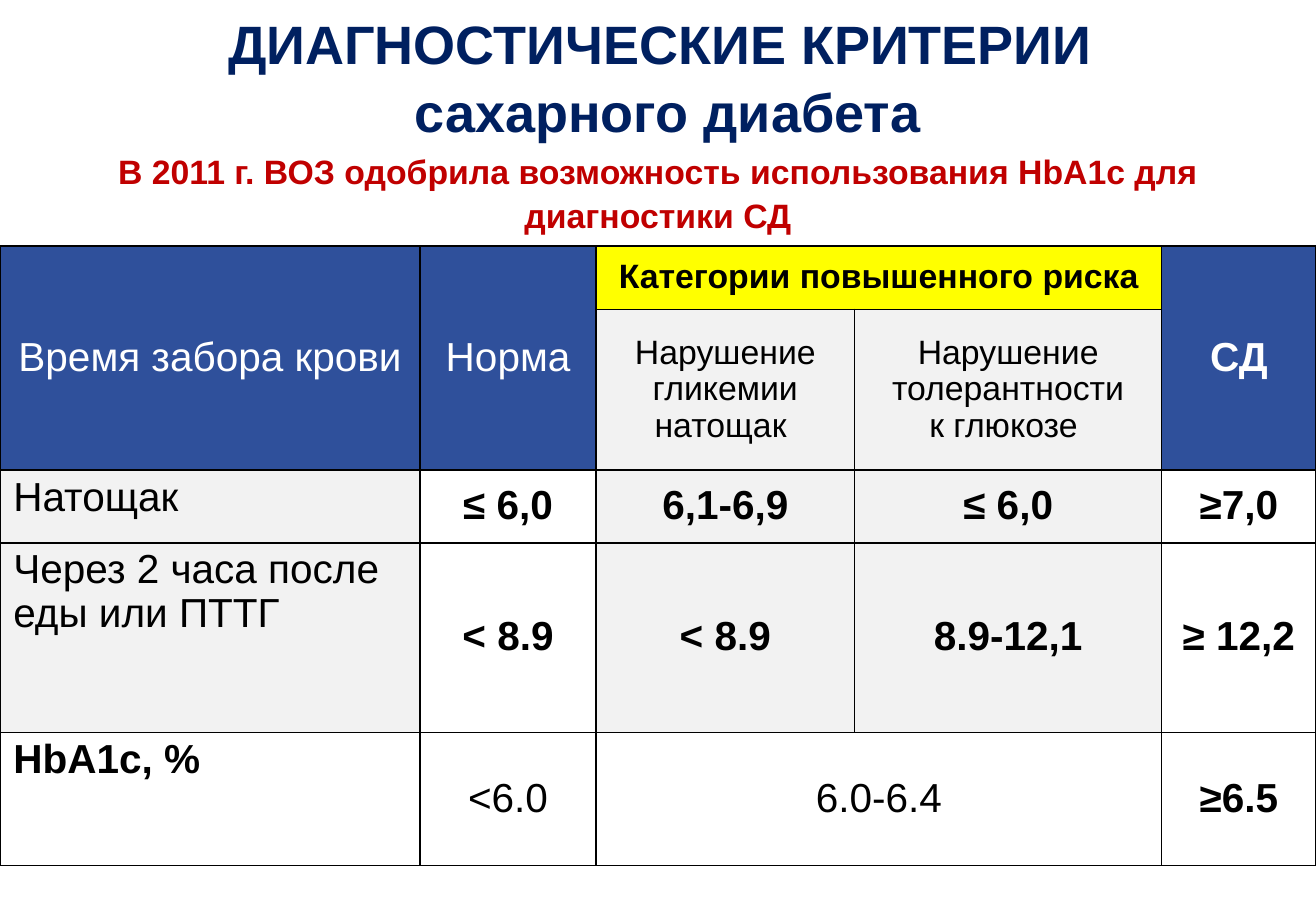
from pptx import Presentation, util as u
from pptx.dml.color import RGBColor
from pptx.enum import text as t
from pptx.oxml import parse_xml
from pptx.oxml.ns import nsdecls
from dataclasses import dataclass


@dataclass(frozen=True)
class Theme:
    font: str = "Arial"
    navy: str = "002060"
    red: str = "C00000"
    blue: str = "2F509B"
    yellow: str = "FFFF00"
    grey: str = "F2F2F2"
    white: str = "FFFFFF"
    black: str = "000000"
    title: int = 32
    cell: int = 24
    small: int = 20


T = Theme()
WIDE, HIGH = 10.83, 7.5
COLS = 3.46, 1.45, 2.13, 2.53, 1.27
ROWS = 0.52, 1.32, 0.6, 1.56, 1.09

LEFT = dict(align=t.PP_ALIGN.LEFT, anchor=t.MSO_ANCHOR.TOP)
HEAD = dict(fill=T.blue, color=T.white)
SUB = dict(fill=T.grey, size=T.small)
GREY = dict(fill=T.grey, bold=True)
BOLD = dict(bold=True)

# (row, column): text, format, rows and columns spanned
CELLS = {
    (0, 0): ("Время забора крови", HEAD, 2, 1),
    (0, 1): ("Норма", HEAD, 2, 1),
    (0, 2): ("Категории повышенного риска",
             dict(fill=T.yellow, size=T.small, bold=True), 1, 2),
    (0, 4): ("СД", HEAD | BOLD, 2, 1),
    (1, 2): ("Нарушение\nгликемии\nнатощак ", SUB, 1, 1),
    (1, 3): ("Нарушение\nтолерантности\nк глюкозе ", SUB, 1, 1),
    (2, 0): ("Натощак", LEFT | dict(fill=T.grey), 1, 1),
    (2, 1): ("≤ 6,0", BOLD, 1, 1),
    (2, 2): ("6,1-6,9", GREY, 1, 1),
    (2, 3): ("≤ 6,0", GREY, 1, 1),
    (2, 4): ("≥7,0", BOLD, 1, 1),
    (3, 0): ("Через 2 часа после еды или ПТТГ", LEFT | dict(fill=T.grey), 1, 1),
    (3, 1): ("< 8.9", BOLD, 1, 1),
    (3, 2): ("< 8.9", GREY, 1, 1),
    (3, 3): ("8.9-12,1", GREY, 1, 1),
    (3, 4): ("≥ 12,2", BOLD, 1, 1),
    (4, 0): ("HbA1c, %", LEFT | BOLD, 1, 1),
    (4, 1): ("<6.0", {}, 1, 1),
    (4, 2): ("6.0-6.4", {}, 1, 2),
    (4, 4): ("≥6.5", BOLD, 1, 1),
}


def share(x, y, w, h):
    """Turn shares of the slide's size into lengths."""
    return [u.Inches(v * s) for v, s in zip((x, y, w, h), (WIDE, HIGH) * 2)]


def write(frame, words, size=T.cell, color=T.black, bold=False,
          align=t.PP_ALIGN.CENTER, lead=0.97):
    frame.text = words
    for para in frame.paragraphs:
        para.alignment, para.line_spacing = align, lead
        for run in para.runs:
            for key, val in dict(name=T.font, size=u.Pt(size), bold=bold).items():
                setattr(run.font, key, val)
            run.font.color.rgb = RGBColor.from_string(color)


def label(slide, box, words, **look):
    frame = slide.shapes.add_textbox(*box).text_frame
    frame.word_wrap = True
    frame.vertical_anchor = t.MSO_ANCHOR.MIDDLE
    write(frame, words, **look)


def edge(cell):
    """Draw a thin black line on each side of the cell."""
    props = cell._tc.get_or_add_tcPr()
    for spot, side in enumerate("LRTB"):
        props.insert(spot, parse_xml(
            f'<a:ln{side} {nsdecls("a")} w="12700"><a:solidFill>'
            f'<a:srgbClr val="{T.black}"/></a:solidFill></a:ln{side}>'))


def paint(cell, fill=None):
    if fill:
        cell.fill.solid()
        cell.fill.fore_color.rgb = RGBColor.from_string(fill)
    else:
        cell.fill.background()
    edge(cell)


def criteria(slide, box):
    grid = slide.shapes.add_table(len(ROWS), len(COLS), *box).table
    grid.first_row = grid.horz_banding = False
    for col, part in zip(grid.columns, COLS):
        col.width = int(box[2] * part / sum(COLS))
    for row, part in zip(grid.rows, ROWS):
        row.height = int(box[3] * part / sum(ROWS))
    for (r, c), (words, form, down, over) in CELLS.items():
        look = dict(form)
        fill = look.pop("fill", None)
        cell = grid.cell(r, c)
        if down * over > 1:
            cell.merge(grid.cell(r + down - 1, c + over - 1))
        cell.vertical_anchor = look.pop("anchor", t.MSO_ANCHOR.MIDDLE)
        cell.margin_left = cell.margin_right = u.Inches(0.11)
        write(cell.text_frame, words, **look)
        for i in range(down):
            for j in range(over):
                paint(grid.cell(r + i, c + j), fill)


def main():
    deck = Presentation()
    deck.slide_width, deck.slide_height = u.Inches(WIDE), u.Inches(HIGH)
    slide = deck.slides.add_slide(deck.slide_layouts[6])
    criteria(slide, share(0, 0.27, 1, 0.68))
    label(slide, share(0.015, 0.017, 0.985, 0.132),
          "ДИАГНОСТИЧЕСКИЕ КРИТЕРИИ \vсахарного диабета",
          size=T.title, color=T.navy, bold=True, lead=1.05)
    label(slide, share(0, 0.159, 1, 0.103),
          "В 2011 г. ВОЗ одобрила возможность использования HbA1c для диагностики СД",
          size=T.small, color=T.red, bold=True, lead=1.07)
    deck.save("out.pptx")


if __name__ == "__main__":
    main()
